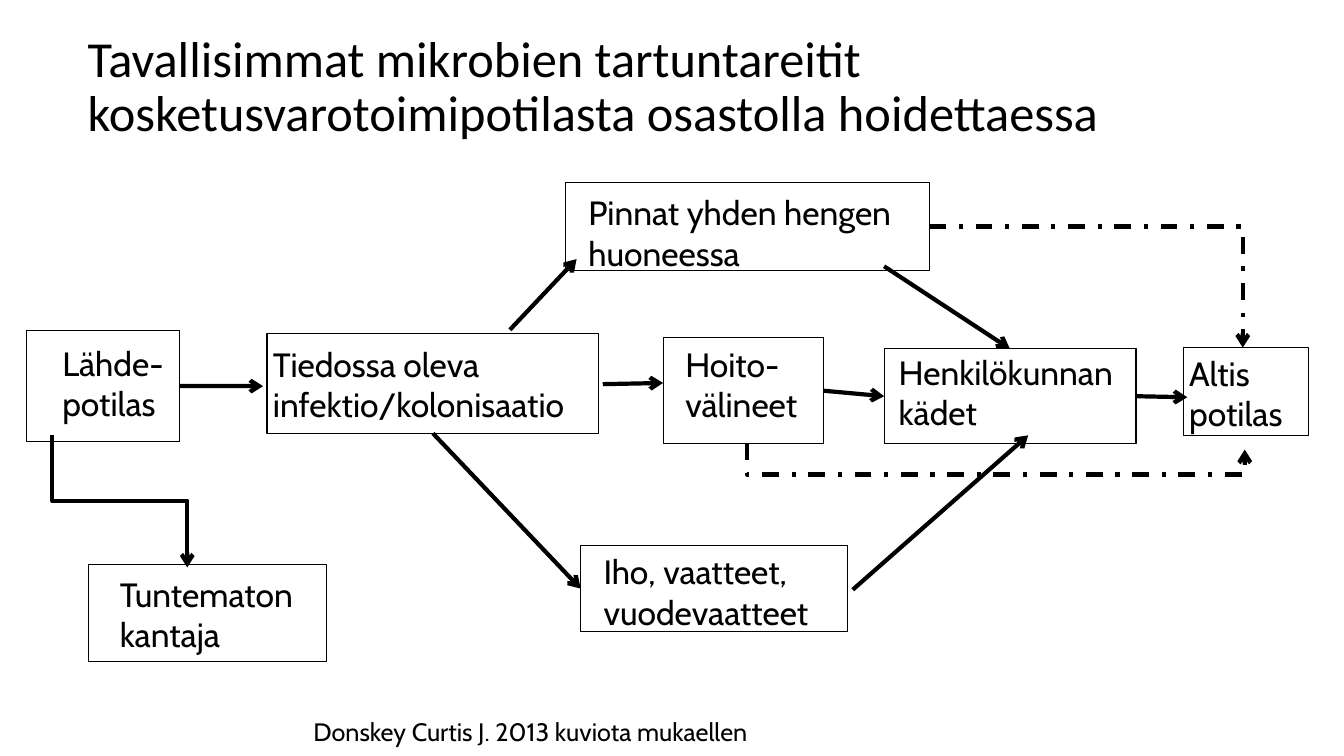
from pptx import Presentation
from pptx.dml.color import RGBColor
from pptx.enum import dml, shapes, text
from pptx.oxml import parse_xml
from pptx.oxml.ns import nsdecls, qn
from pptx.util import Cm, Pt

BLACK = RGBColor(0, 0, 0)
TOP, LEFT, BOTTOM, RIGHT = range(4)

# Content, lengths in cm
TITLE = ("Tavallisimmat mikrobien tartuntareitit "
         "kosketusvarotoimipotilasta osastolla hoidettaessa")
CREDIT = "Donskey Curtis J. 2013 kuviota mukaellen"

# name: (wording, box (x, y, w, h), label (x, y, w))
BOXES = {
    "source": ("Lähde-\npotilas", (0.66, 8.33, 3.86, 2.79), (1.32, 8.51, 3.3)),
    "known": ("Tiedossa oleva infektio/kolonisaatio",
              (6.73, 8.41, 8.36, 2.51), (6.63, 8.53, 8.56)),
    "tools": ("Hoito-\nvälineet", (16.71, 8.51, 4.04, 2.67), (17.02, 8.53, 3.63)),
    "hands": ("Henkilökunnan\nkädet", (22.28, 8.79, 6.35, 2.39), (22.4, 8.74, 6.15)),
    "target": ("Altis potilas", (29.82, 8.76, 3.15, 2.21), (29.72, 8.76, 3.2)),
    "room": ("Pinnat yhden hengen\nhuoneessa",
             (14.25, 4.6, 9.17, 2.21), (14.58, 4.72, 8.51)),
    "skin": ("Iho, vaatteet,\nvuodevaatteet",
             (14.63, 13.74, 6.73, 2.18), (14.96, 13.77, 6.07)),
    "carrier": ("Tuntematon\nkantaja", (2.24, 14.22, 5.99, 2.44), (2.77, 14.33, 5.77)),
}

# Each end is a point or a (box, side) pair
ARROWS = [
    (("source", RIGHT), (6.63, 9.73)),
    ((15.19, 9.68), (16.71, 9.65)),
    (("tools", RIGHT), ("hands", LEFT)),
    (("hands", RIGHT), (29.92, 10.01)),
    ((22.28, 6.71), (25.45, 8.79)),
    ((21.49, 14.86), (25.91, 10.97)),
    (("known", BOTTOM), ("skin", LEFT)),
    ((12.85, 8.31), (14.53, 6.53)),
]

# Down, across, down: (start, end, height of the crossbar, dashed)
STEPS = [
    ((1.32, 10.95), (4.72, 14.3), 12.62, False),
    ((18.82, 11.18), (31.37, 11.33), 11.96, True),
]
CORNER = ((23.42, 5.71), (31.32, 8.76))

deck = Presentation()
deck.slide_width, deck.slide_height = Cm(33.87), Cm(19.05)
slide = deck.slides.add_slide(deck.slide_layouts[6])
rects = {}


def write(words, x, y, w, h, font, size):
    frame = slide.shapes.add_textbox(Cm(x), Cm(y), Cm(w), Cm(h)).text_frame
    frame.word_wrap = True
    frame.text = words
    for para in frame.paragraphs:
        for run in para.runs:
            run.font.name, run.font.size = font, Pt(size)
            run.font.color.rgb = BLACK
    return frame


def link(kind, start, end, dashed=False):
    line = slide.shapes.add_connector(kind, *map(Cm, start + end))
    line.line.color.rgb = BLACK
    line.line.width = Pt(3)
    if dashed:
        line.line.dash_style = dml.MSO_LINE.DASH_DOT
    props = line.element.spPr
    props.find(qn("a:ln")).append(
        parse_xml(f'<a:tailEnd {nsdecls("a")} type="arrow"/>'))
    props.append(parse_xml(f'<a:effectLst {nsdecls("a")}/>'))
    return line


def spot(end):
    """Point of an arrow end, in cm."""
    if end[0] not in BOXES:
        return end
    x, y, w, h = BOXES[end[0]][1]
    return {TOP: (x + w / 2, y), LEFT: (x, y + h / 2),
            BOTTOM: (x + w / 2, y + h), RIGHT: (x + w, y + h / 2)}[end[1]]


# Title
head = write(TITLE, 1.96, 0.53, 27.18, 3.4, "Calibri", 36)
head.vertical_anchor = text.MSO_ANCHOR.MIDDLE
head.paragraphs[0].line_spacing = 0.9

# Boxes and their labels
for name, (words, box, label) in BOXES.items():
    rect = slide.shapes.add_shape(shapes.MSO_SHAPE.RECTANGLE, *map(Cm, box))
    rect.shadow.inherit = False
    rect.fill.background()
    rect.line.color.rgb = BLACK
    rect.line.width = Pt(0.75)
    rects[name] = rect
    write(words, *label, 2.31, "Cabin", 24)

# Straight arrows
for start, end in ARROWS:
    arrow = link(shapes.MSO_CONNECTOR.STRAIGHT, spot(start), spot(end))
    if start[0] in rects:
        arrow.begin_connect(rects[start[0]], start[1])
    if end[0] in rects:
        arrow.end_connect(rects[end[0]], end[1])

# Stepped arrows: a mirrored elbow turned by 270 degrees about its centre
for (x1, y1), (x2, y2), bar, dashed in STEPS:
    midx, midy = (x1 + x2) / 2, (y1 + y2) / 2
    dx, dy = (x2 - x1) / 2, (y2 - y1) / 2
    step = link(shapes.MSO_CONNECTOR.ELBOW,
                (midx + dy, midy - dx), (midx - dy, midy + dx), dashed)
    props = step.element.spPr
    props.find(qn("a:xfrm")).set("rot", str(270 * 60000))
    share = round((bar - y1) / (y2 - y1) * 100000)
    props.find(qn("a:prstGeom")).find(qn("a:avLst")).append(
        parse_xml(f'<a:gd {nsdecls("a")} name="adj1" fmla="val {share}"/>'))

# Corner arrow from the room to the target patient
turn = link(shapes.MSO_CONNECTOR.ELBOW, *CORNER, True)
turn.element.spPr.find(qn("a:prstGeom")).set("prst", "bentConnector2")

# Credit
write(CREDIT, 7.65, 17.93, 12.47, 1.02, "Cabin", 18)

deck.save("out.pptx")
